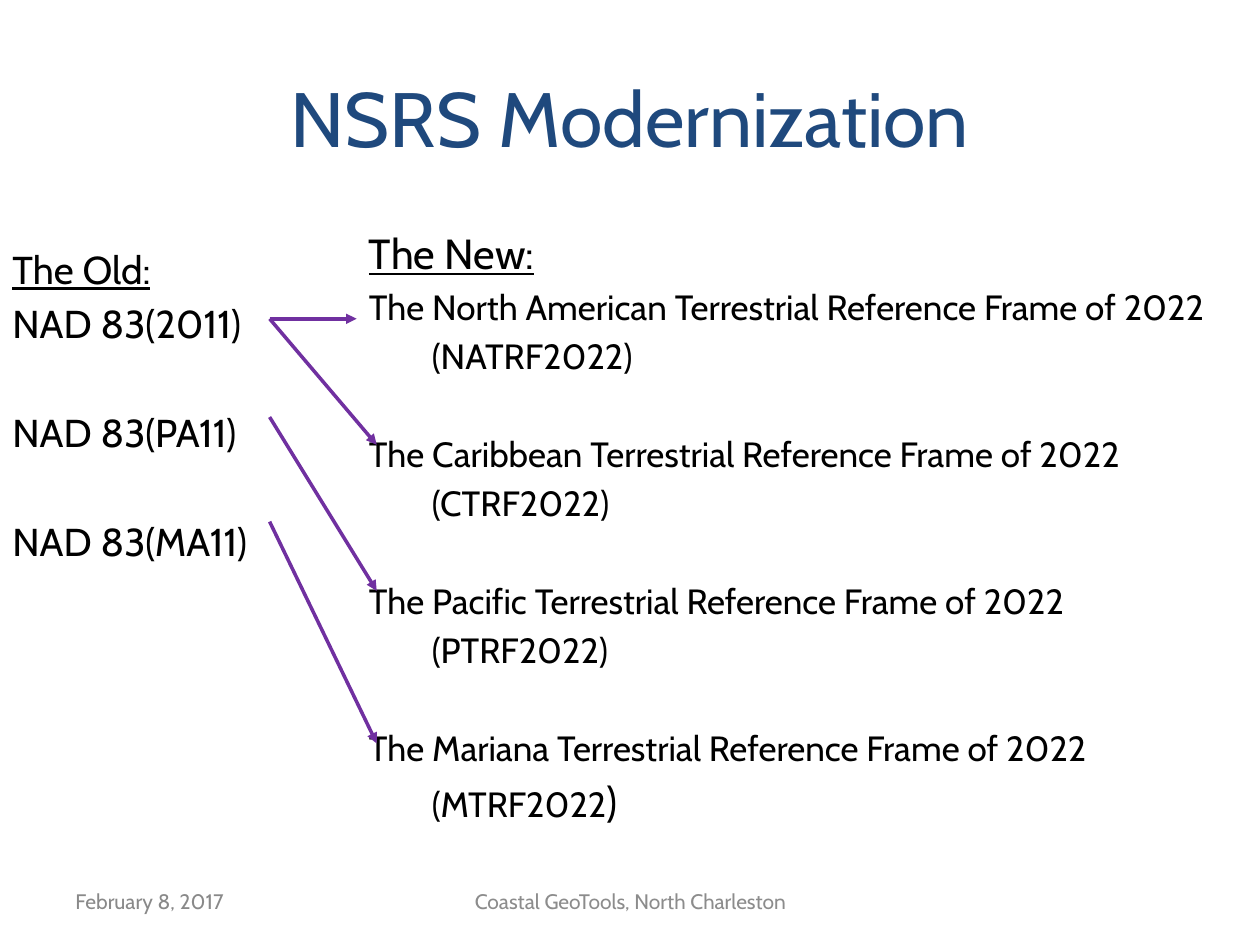
from lxml import etree
from pptx import Presentation
from pptx.dml.color import RGBColor
from pptx.enum import shapes, text
from pptx.oxml.ns import qn
from pptx.util import Inches, Pt

FONT = "Cabin"
BLACK, BLUE, PURPLE = "000000", "1F497D", "7030A0"
OLD_FRAMES = ["NAD 83(2011)", "NAD 83(PA11)", "NAD 83(MA11)"]
NEW_FRAMES = [
    ("North American", "NATRF2022"),
    ("Caribbean", "CTRF2022"),
    ("Pacific", "PTRF2022"),
    ("Mariana", "MTRF2022"),
]
ARROW_LEFT = 2.14
ARROWS = [(2.53, 2.83, 2.53), (2.53, 2.99, 3.53), (3.31, 2.99, 4.69), (4.14, 2.99, 5.9)]


def rgb(value):
    """Turn a hex string into a colour."""
    return RGBColor.from_string(value)


def add_box(slide, box, anchor=text.MSO_ANCHOR.TOP):
    """Add a wrapping text box and return its text frame."""
    tf = slide.shapes.add_textbox(*map(Inches, box)).text_frame
    tf.word_wrap = True
    tf.vertical_anchor = anchor
    return tf


def add_run(p, words, size, color=BLACK, underline=False):
    """Append one styled run to a paragraph."""
    r = p.add_run()
    r.text = words
    r.font.name = FONT
    r.font.size = Pt(size)
    r.font.color.rgb = rgb(color)
    if underline:
        r.font.underline = True


def add_line(tf, words, size, space):
    """Append a paragraph with the given points before it and return it."""
    p = tf.add_paragraph()
    p.space_before = Pt(space)
    add_run(p, words, size)
    return p


def add_label(slide, box, words, size, color, align):
    """Place a single line, centred vertically in its box."""
    p = add_box(slide, box, text.MSO_ANCHOR.MIDDLE).paragraphs[0]
    p.alignment = align
    add_run(p, words, size, color)


def add_old_frames(slide, box):
    """List the old datums under their heading."""
    tf = add_box(slide, box)
    size = 22.2
    add_run(tf.paragraphs[0], "The Old:", size, underline=True)
    for i, name in enumerate(OLD_FRAMES):
        add_line(tf, name, size, 35.6 if i else 4.4)


def add_new_frames(slide, box):
    """List the new reference frames with tabbed abbreviations."""
    tf = add_box(slide, box)
    add_run(tf.paragraphs[0], "The New:", 24, underline=True)
    for i, (region, code) in enumerate(NEW_FRAMES):
        last = i == len(NEW_FRAMES) - 1
        add_line(tf, f"The {region} Terrestrial Reference Frame of 2022", 20, 32 if i else 4)
        p = add_line(tf, f"\t({code}" if last else f"\t({code})", 20, 4)
        if last:
            add_run(p, ")", 24)


def add_arrow(slide, x1, y1, x2, y2):
    """Draw a purple arrow from an old datum to its successor."""
    sp = slide.shapes.add_connector(
        shapes.MSO_CONNECTOR.STRAIGHT, *map(Inches, (x1, y1, x2, y2)))
    sp.line.color.rgb = rgb(PURPLE)
    sp.line.width = Pt(2)
    etree.SubElement(sp.line._get_or_add_ln(), qn("a:tailEnd"), type="triangle")
    etree.SubElement(sp._element.spPr, qn("a:effectLst"))


def main():
    """Build and save the slide."""
    prs = Presentation()
    prs.slide_width, prs.slide_height = Inches(10), Inches(7.5)
    s = prs.slides.add_slide(prs.slide_layouts[6])
    left, center = text.PP_ALIGN.LEFT, text.PP_ALIGN.CENTER
    add_label(s, (0.5, 0.3, 9, 1.25), "NSRS Modernization", 44, BLUE, center)
    add_old_frames(s, (0, 1.9, 2.99, 2.58))
    add_new_frames(s, (2.83, 1.76, 6.92, 5.25))
    add_label(s, (0.5, 6.95, 2.33, 0.4), "February 8, 2017", 12, "898989", left)
    add_label(s, (3.42, 6.95, 3.17, 0.4), "Coastal GeoTools, North Charleston",
              12, "8C8C8C", center)
    for y1, x2, y2 in ARROWS:
        add_arrow(s, ARROW_LEFT, y1, x2, y2)
    prs.save("out.pptx")


if __name__ == "__main__":
    main()
